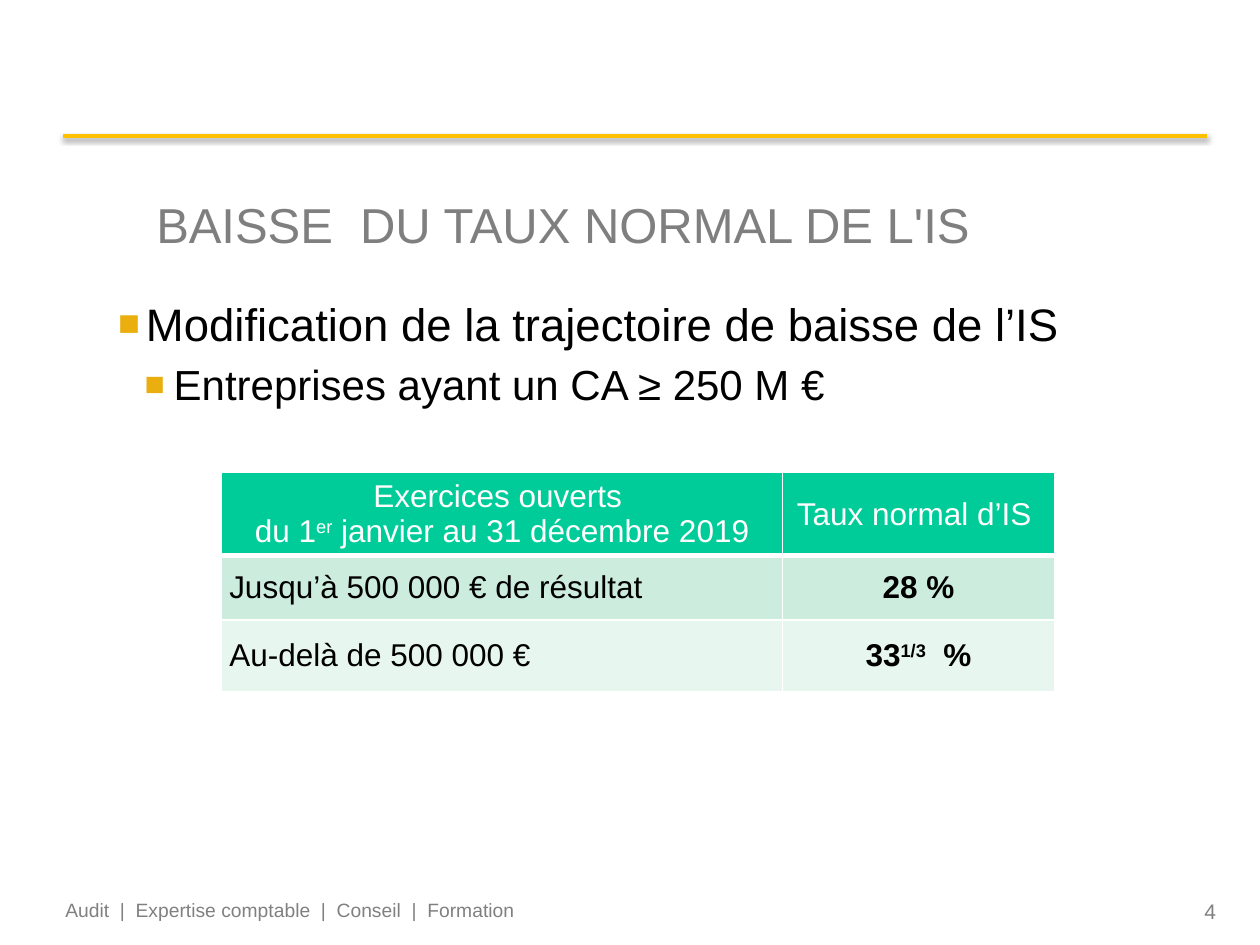
from typing import NamedTuple

from lxml.etree import SubElement
from pptx import Presentation
from pptx.dml.color import RGBColor
from pptx.enum.shapes import MSO_CONNECTOR
from pptx.enum.text import MSO_ANCHOR, MSO_AUTO_SIZE, PP_ALIGN
from pptx.oxml import parse_xml
from pptx.oxml.ns import nsdecls, qn
from pptx.util import Inches, Pt

FONT = "Arial"
WHITE = RGBColor(0xFF, 0xFF, 0xFF)
BLACK = RGBColor(0x00, 0x00, 0x00)
GREY = RGBColor(0x80, 0x80, 0x80)
TITLE_GREY = RGBColor(0x7F, 0x7F, 0x7F)
GOLD = RGBColor(0xFF, 0xC0, 0x00)
BULLET_GOLD = RGBColor(0xEA, 0xAF, 0x0F)
HEADER_GREEN = RGBColor(0x00, 0xCC, 0x99)
BAND_DARK = RGBColor(0xCC, 0xEC, 0xDE)
BAND_LIGHT = RGBColor(0xE7, 0xF6, 0xEF)


class Box(NamedTuple):
    left: float
    top: float
    width: float
    height: float

    def emu(self) -> list:
        return [Inches(length) for length in self]


class Span(NamedTuple):
    text: str
    raised: bool = False


class Bullet(NamedTuple):
    text: str
    level: int
    size: int
    margin: float
    hanging: float


class RateRow(NamedTuple):
    height: float
    fill: RGBColor
    cells: tuple
    header: bool = False


BULLETS = (
    Bullet("Modification de la trajectoire de baisse de l’IS", 0, 26, 0.22, 0.22),
    Bullet("Entreprises ayant un CA ≥ 250 M €", 1, 24, 0.44, 0.23),
)
COLUMN_WIDTHS = (4.45, 2.16)
RATE_ROWS = (
    RateRow(0.66, HEADER_GREEN, (
        (Span("Exercices ouverts \vdu 1"), Span("er", True),
         Span(" janvier au 31 décembre 2019")),
        (Span("Taux normal d’IS "),)), header=True),
    RateRow(0.51, BAND_DARK, (
        (Span("Jusqu’à 500 000 € de résultat"),), (Span("28 %"),))),
    RateRow(0.57, BAND_LIGHT, (
        (Span("Au-delà de 500 000 €"),),
        (Span("33"), Span("1/3", True), Span("  %")))),
)


def add_text(paragraph, text: str, size: int, color: RGBColor,
             bold: bool = False, raised: bool = False) -> None:
    for index, line in enumerate(text.split("\v")):
        if index:
            paragraph.add_line_break()
        run = paragraph.add_run()
        run.text = line
        run.font.name = FONT
        run.font.size = Pt(size)
        run.font.bold = bold
        run.font.color.rgb = color
        if raised:
            run.font._element.set("baseline", "30000")


def add_label(slide, box: Box, text: str, size: int, align: PP_ALIGN) -> None:
    frame = slide.shapes.add_textbox(*box.emu()).text_frame
    frame.word_wrap = True
    paragraph = frame.paragraphs[0]
    paragraph.alignment = align
    add_text(paragraph, text, size, GREY)


def add_rule(slide, left: float, right: float, y: float) -> None:
    rule = slide.shapes.add_connector(
        MSO_CONNECTOR.STRAIGHT, Inches(left), Inches(y), Inches(right), Inches(y))
    rule.line.color.rgb = GOLD
    rule.line.width = Pt(2)
    rule._element.spPr.append(parse_xml(
        f'<a:effectLst {nsdecls("a")}>'
        f'<a:outerShdw blurRad="{Pt(3.1)}" dist="{Pt(1.6)}" dir="5400000" rotWithShape="0">'
        '<a:srgbClr val="000000"><a:alpha val="38000"/></a:srgbClr>'
        '</a:outerShdw></a:effectLst>'))


def add_bullets(slide, box: Box) -> None:
    frame = slide.shapes.add_textbox(*box.emu()).text_frame
    frame.word_wrap = True
    for index, bullet in enumerate(BULLETS):
        paragraph = frame.add_paragraph() if index else frame.paragraphs[0]
        paragraph.level = bullet.level
        paragraph.space_before = Pt(bullet.size * 0.2 if index else 0)
        properties = paragraph._p.get_or_add_pPr()
        properties.set("marL", str(Inches(bullet.margin)))
        properties.set("indent", str(-Inches(bullet.hanging)))
        color = SubElement(properties, qn("a:buClr"))
        SubElement(color, qn("a:srgbClr"), val=str(BULLET_GOLD))
        SubElement(properties, qn("a:buSzPct"), val="80000")
        SubElement(properties, qn("a:buFont"), typeface=FONT)
        SubElement(properties, qn("a:buChar"), char="■")
        add_text(paragraph, bullet.text, bullet.size, BLACK)


def set_borders(cell, widths: dict) -> None:
    properties = cell._tc.get_or_add_tcPr()
    for side, width in widths.items():
        line = SubElement(properties, qn(f"a:ln{side}"), w=str(Pt(width)))
        fill = SubElement(line, qn("a:solidFill"))
        SubElement(fill, qn("a:srgbClr"), val=str(WHITE))


def fill_cell(cell, spans: tuple, row: RateRow, is_rate: bool,
              borders: dict) -> None:
    set_borders(cell, borders)
    cell.fill.solid()
    cell.fill.fore_color.rgb = row.fill
    cell.vertical_anchor = MSO_ANCHOR.MIDDLE
    cell.margin_left = cell.margin_right = Inches(0.06)
    cell.margin_top = cell.margin_bottom = Inches(0.03)
    paragraph = cell.text_frame.paragraphs[0]
    centred = row.header or is_rate
    paragraph.alignment = PP_ALIGN.CENTER if centred else PP_ALIGN.LEFT
    color = WHITE if row.header else BLACK
    for span in spans:
        add_text(paragraph, span.text, 18, color,
                 bold=is_rate and not row.header, raised=span.raised)


def add_rate_table(slide, box: Box) -> None:
    table = slide.shapes.add_table(
        len(RATE_ROWS), len(COLUMN_WIDTHS), *box.emu()).table
    for column, width in zip(table.columns, COLUMN_WIDTHS):
        column.width = Inches(width)
    for row_index, row in enumerate(RATE_ROWS):
        table.rows[row_index].height = Inches(row.height)
        # The header is set off by a thicker line below it
        after_header = row_index > 0 and RATE_ROWS[row_index - 1].header
        borders = {"L": 1, "R": 1, "T": 3 if after_header else 1,
                   "B": 3 if row.header else 1}
        for column_index, spans in enumerate(row.cells):
            fill_cell(table.cell(row_index, column_index), spans, row,
                      column_index == 1, borders)


def add_title(slide, box: Box, text: str) -> None:
    title = slide.shapes.title
    title.left, title.top, title.width, title.height = box.emu()
    frame = title.text_frame
    frame.auto_size = MSO_AUTO_SIZE.NONE
    frame.vertical_anchor = MSO_ANCHOR.MIDDLE
    paragraph = frame.paragraphs[0]
    paragraph.alignment = PP_ALIGN.LEFT
    add_text(paragraph, text, 28, TITLE_GREY)


def main() -> None:
    presentation = Presentation()
    presentation.slide_width = Inches(10)
    presentation.slide_height = Inches(7.5)
    slide = presentation.slides.add_slide(presentation.slide_layouts[5])

    # Page frame: number, rule and footer
    add_label(slide, Box(9.17, 7.08, 0.58, 0.3), "4", 12, PP_ALIGN.RIGHT)
    add_rule(slide, 0.5, 9.58, 1.08)
    add_label(slide, Box(0.42, 7.08, 4.17, 0.28),
              "Audit  |  Expertise comptable  |  Conseil  |  Formation",
              11, PP_ALIGN.LEFT)

    # Content
    add_title(slide, Box(1.14, 1.23, 6.86, 1.09), "BAISSE  DU TAUX NORMAL DE L'IS")
    add_bullets(slide, Box(0.84, 2.3, 8.66, 4.41))
    add_rate_table(slide, Box(1.76, 3.75, 6.61, 1.74))

    presentation.save("out.pptx")


if __name__ == "__main__":
    main()
